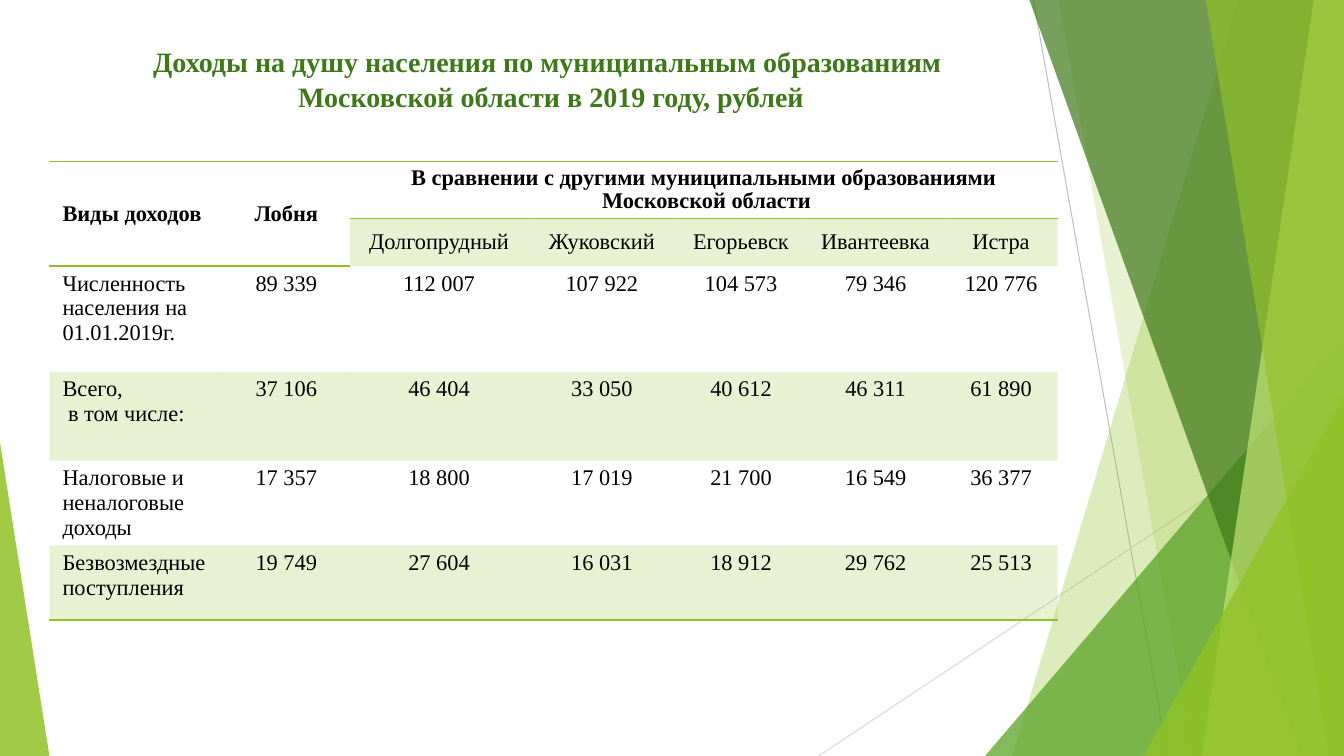
from dataclasses import dataclass

from lxml import etree
from pptx import Presentation
from pptx.dml.color import RGBColor
from pptx.enum.shapes import MSO_CONNECTOR, MSO_SHAPE
from pptx.enum.text import MSO_ANCHOR, MSO_AUTO_SIZE, PP_ALIGN
from pptx.oxml.ns import qn
from pptx.util import Inches, Pt

LINE = MSO_CONNECTOR.STRAIGHT
TRIANGLE = MSO_SHAPE.ISOSCELES_TRIANGLE
TOP, MIDDLE = MSO_ANCHOR.TOP, MSO_ANCHOR.MIDDLE
LEFT, CENTER = PP_ALIGN.LEFT, PP_ALIGN.CENTER
NO_FIT = MSO_AUTO_SIZE.NONE

LIME = RGBColor(0x90, 0xC2, 0x26)
GREEN = RGBColor(0x54, 0xA0, 0x21)
DARK = RGBColor(0x3F, 0x78, 0x19)
PALE = RGBColor(0xC0, 0xE4, 0x74)
BLACK = RGBColor(0, 0, 0)
GRAY = RGBColor(0xBF, 0xBF, 0xBF)
SILVER = RGBColor(0xD9, 0xD9, 0xD9)

FONT = "Times New Roman"
PLAIN_STYLE = "{2D5ABB26-0587-4C30-8999-92F81FD0307C}"
WIDE, HIGH = 13.33, 7.5


@dataclass
class Ray:
    start: tuple[float, float]
    end: tuple[float, float]
    color: RGBColor


@dataclass
class Band:
    """A strip from the top edge to the bottom edge."""
    top: tuple[float, float]
    base: tuple[float, float]
    color: RGBColor
    alpha: int


@dataclass
class Wedge:
    """A triangle on the bottom edge; its peak lies at 0 (left) to 1 (right)."""
    left: float
    top: float
    width: float
    peak: float
    color: RGBColor
    alpha: int


DECOR = [
    Ray((10.25, 0), (11.58, HIGH), GRAY),
    Ray((WIDE, 4.03), (8.12, HIGH), SILVER),
    Band((12.28, WIDE), (10.04, WIDE), LIME, 30),
    Band((10.5, WIDE), (11.83, WIDE), LIME, 20),
    Wedge(9.77, 3.33, 3.56, 1, GREEN, 72),
    Band((10.21, WIDE), (12.91, WIDE), DARK, 70),
    Band((13.03, WIDE), (11.92, WIDE), PALE, 70),
    Band((11.96, WIDE), (13.18, WIDE), LIME, 65),
    Wedge(11.34, 3.93, 1.99, 1, LIME, 80),
    Wedge(0, 4.39, 0.49, 0, LIME, 85),
]

TITLE = ("Доходы на душу населения по муниципальным образованиям \v"
         "Московской области в 2019 году, рублей")
COLS = [1.72, 1.26, 1.77, 1.46, 1.3, 1.37, 1.12]
ROWS = [0.49, 0.47, 1.05, 0.88, 0.74, 0.74]
CELLS = [
    ["Виды доходов", "Лобня",
     "В сравнении с другими муниципальными образованиями\n Московской области",
     "", "", "", ""],
    ["", "", "Долгопрудный", "Жуковский", "Егорьевск", "Ивантеевка", "Истра"],
    ["Численность населения на 01.01.2019г.",
     "89 339", "112 007", "107 922", "104 573", "79 346", "120 776"],
    ["Всего,\n в том числе:",
     "37 106", "46 404", "33 050", "40 612", "46 311", "61 890"],
    ["Налоговые и неналоговые доходы",
     "17 357", "18 800", "17 019", "21 700", "16 549", "36 377"],
    ["Безвозмездные поступления",
     "19 749", "27 604", "16 031", "18 912", "29 762", "25 513"],
]
LAST = len(ROWS) - 1


def fade(node, alpha: int) -> None:
    """Set the opacity, in percent, of the colour inside node."""
    color = next(node.iter(qn("a:srgbClr")))
    etree.SubElement(color, qn("a:alpha"), val=str(alpha * 1000))


def paint(shape, color: RGBColor, alpha: int) -> None:
    shape.shadow.inherit = False
    shape.fill.solid()
    shape.fill.fore_color.rgb = color
    fade(shape._element.spPr, alpha)
    shape.line.fill.background()


def draw(shapes, part: Ray | Band | Wedge) -> None:
    if isinstance(part, Ray):
        ends = [Inches(n) for n in (*part.start, *part.end)]
        ray = shapes.add_connector(LINE, *ends)
        ray.line.color.rgb = part.color
        ray.line.width = Pt(0.75)
        etree.SubElement(ray._element.spPr, qn("a:effectLst"))
        return
    if isinstance(part, Band):
        (a, b), (c, d) = part.top, part.base
        points = [(Inches(x), Inches(y))
                  for x, y in ((a, 0), (b, 0), (d, HIGH), (c, HIGH))]
        pen = shapes.build_freeform(*points[0])
        pen.add_line_segments(points[1:])
        shape = pen.convert_to_shape()
    else:
        shape = shapes.add_shape(
            TRIANGLE, Inches(part.left), Inches(part.top),
            Inches(part.width), Inches(HIGH - part.top))
        shape.adjustments[0] = part.peak
    paint(shape, part.color, part.alpha)


def style(frame, size: int, color: RGBColor, bold: bool, align) -> None:
    for para in frame.paragraphs:
        para.alignment = align
        for run in para.runs:
            font = run.font
            font.name, font.size, font.bold = FONT, Pt(size), bold
            font.color.rgb = color


def edge(cell, tag: str) -> None:
    """Add a lime border; a:lnB must be added before a:lnT."""
    line = etree.Element(qn(tag), w=str(Pt(1)))
    fill = etree.SubElement(line, qn("a:solidFill"))
    etree.SubElement(fill, qn("a:srgbClr"), val=str(LIME))
    cell._tc.get_or_add_tcPr().insert(0, line)


def fill_cell(cell, row: int, col: int) -> None:
    cell.text = CELLS[row][col]
    cell.margin_left = cell.margin_right = Inches(0.13)
    cell.margin_top = cell.margin_bottom = Inches(0.05)
    cell.vertical_anchor = MIDDLE if row < 2 else TOP
    style(cell.text_frame, 16, BLACK, row == 0, CENTER if col else LEFT)
    if row == 0 and col > 1:
        for para in cell.text_frame.paragraphs:
            para.line_spacing = 0.95
    if row % 2 and (row > 1 or col > 1):
        cell.fill.solid()
        cell.fill.fore_color.rgb = LIME
        fade(cell._tc.tcPr, 20)
    else:
        cell.fill.background()
    if row == LAST or row == (1 if col < 2 else 0) or (row == 0 and col < 2):
        edge(cell, "a:lnB")
    if row == 0:
        edge(cell, "a:lnT")


def add_grid(shapes) -> None:
    frame = shapes.add_table(
        len(ROWS), len(COLS), Inches(0.49), Inches(1.6),
        Inches(sum(COLS)), Inches(sum(ROWS)))
    table = frame.table
    table.first_row = table.horz_banding = False
    table._tbl.tblPr.find(qn("a:tableStyleId")).text = PLAIN_STYLE
    for col, width in enumerate(COLS):
        table.columns[col].width = Inches(width)
    for row, height in enumerate(ROWS):
        table.rows[row].height = Inches(height)
        for col in range(len(COLS)):
            fill_cell(table.cell(row, col), row, col)
    for col in (0, 1):
        table.cell(0, col).merge(table.cell(1, col))
    table.cell(0, 2).merge(table.cell(0, len(COLS) - 1))


def add_title(title) -> None:
    title.left, title.top = Inches(0.58), Inches(0.37)
    title.width, title.height = Inches(9.77), Inches(0.88)
    frame = title.text_frame
    frame.text = TITLE
    frame.word_wrap = True
    frame.auto_size = NO_FIT
    frame.vertical_anchor = TOP
    frame.paragraphs[0].line_spacing = 1.05
    style(frame, 20, DARK, True, CENTER)


def main() -> None:
    deck = Presentation()
    deck.slide_width, deck.slide_height = Inches(WIDE), Inches(HIGH)
    slide = deck.slides.add_slide(deck.slide_layouts[5])
    for part in DECOR:
        draw(slide.shapes, part)
    add_title(slide.shapes.title)
    add_grid(slide.shapes)
    deck.save("out.pptx")


if __name__ == "__main__":
    main()
